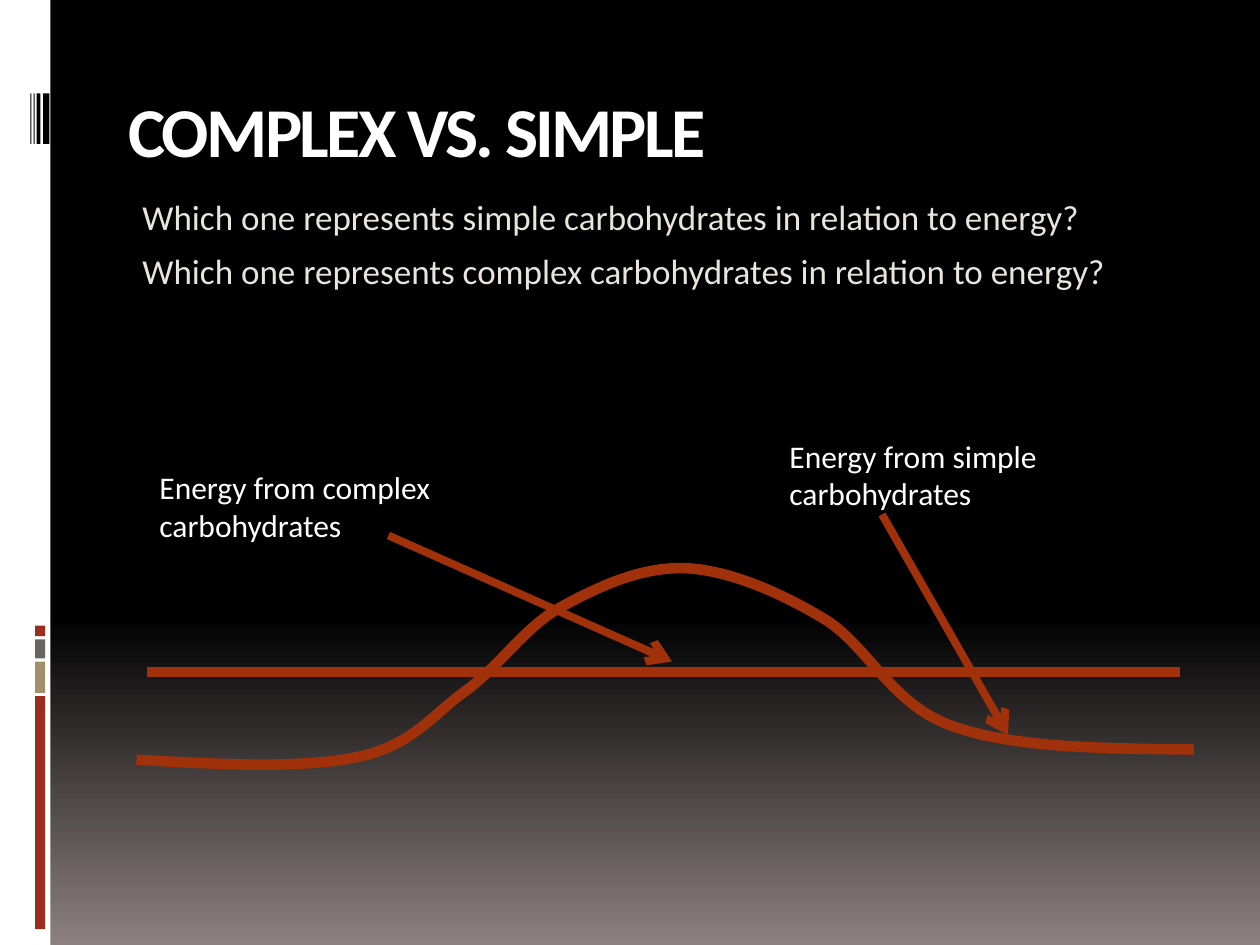
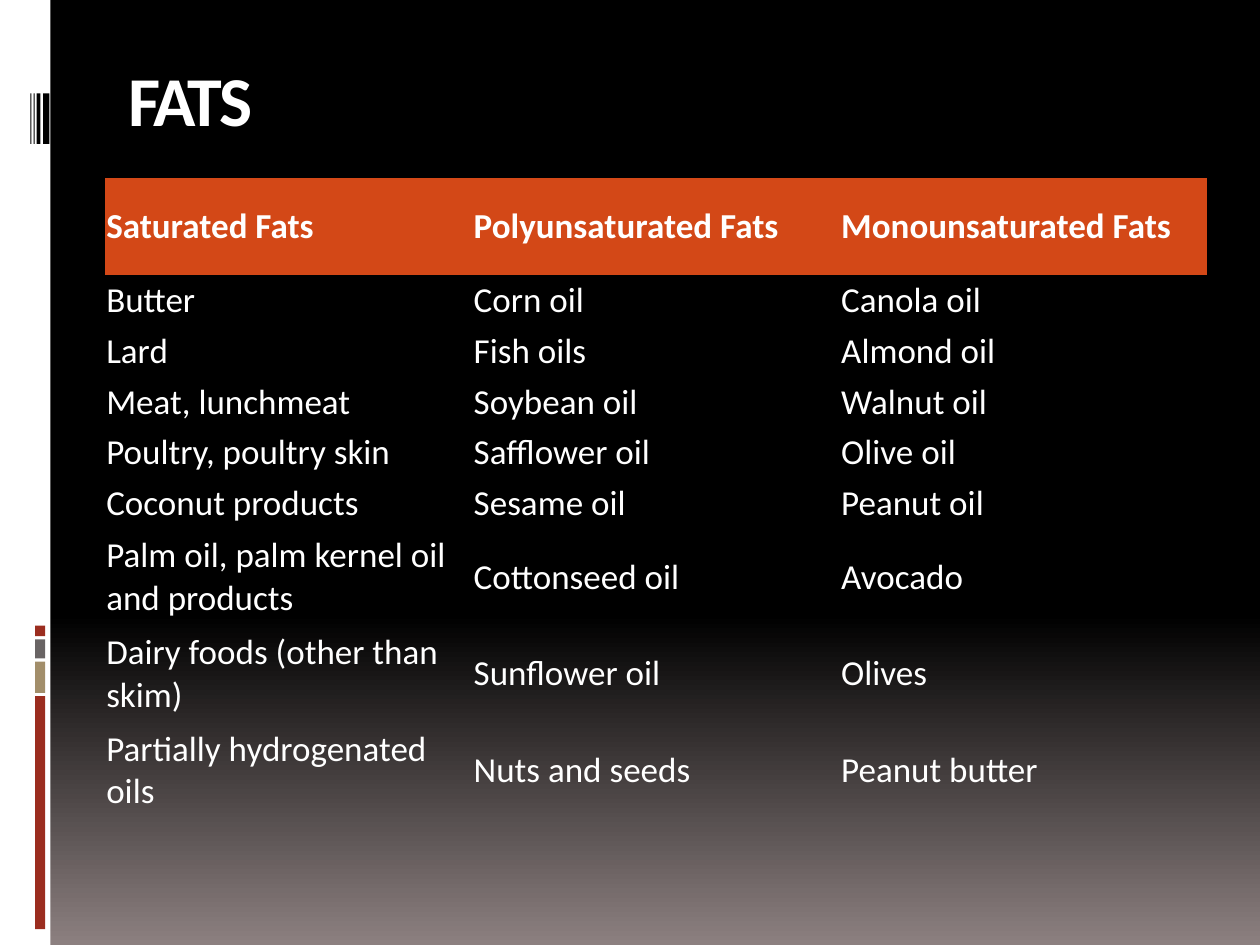
from lxml import etree
from pptx import Presentation, util as u
from pptx.dml.color import RGBColor
from pptx.enum import shapes as sh, text as tx
from pptx.oxml.ns import qn

# Grid: 120 columns by 90 rows on a 10 by 7.5 inch slide
WIDE, HIGH = u.Inches(10), u.Inches(7.5)
COLS, ROWS = 120, 90
FONT = "Calibri"
WHITE, BLACK, CREAM = "FFFFFF", "000000", "E9E5DC"
RUST, ORANGE, HAZE = "A0310A", "D34817", "8C8080"
RED, GREY, TAN = "9B2D1F", "696464", "A28E6A"
NO_STYLE = "{2D5ABB26-0587-4C30-8999-92F81FD0307C}"

FATS = [
    ("Saturated Fats", "Polyunsaturated Fats", "Monounsaturated Fats"),
    ("Butter", "Corn oil", "Canola oil"),
    ("Lard", "Fish oils", "Almond oil"),
    ("Meat, lunchmeat", "Soybean oil", "Walnut oil"),
    ("Poultry, poultry skin", "Safflower oil", "Olive oil"),
    ("Coconut products", "Sesame oil", "Peanut oil"),
    ("Palm oil, palm kernel oil and products", "Cottonseed oil", "Avocado"),
    ("Dairy foods (other than skim)", "Sunflower oil", "Olives"),
    ("Partially hydrogenated oils", "Nuts and seeds", "Peanut butter"),
]
TALL = {0, 6, 7, 8}  # rows with room for two lines

# Bezier points of the energy wave, in percent of its box
WAVE = [
    (0, 95.6),
    (7.9, 98.1), (15.7, 100), (20.8, 94.4),
    (26.1, 88.8), (28, 73.1), (31.2, 61.2),
    (34.4, 48.8), (36.7, 30), (40.1, 20),
    (43.6, 10), (47.6, 0), (51.8, 0.6),
    (55.8, 1.3), (60.6, 11.9), (64.8, 25),
    (69, 37.5), (71.3, 68.1), (77.1, 78.8),
    (83, 90), (91.4, 90), (100, 90.6),
]


def col(n):
    return round(WIDE * n / COLS)


def row(n):
    return round(HIGH * n / ROWS)


def area(box):
    left, top, wide, high = box
    return col(left), row(top), col(wide), row(high)


def hue(code):
    return RGBColor.from_string(code)


def write(par, words, size, color, bold=False):
    run = par.add_run()
    run.text = words
    font = run.font
    font.name, font.size, font.bold = FONT, u.Pt(size), bold
    font.color.rgb = hue(color)
    return run


def place(shape, box):
    shape.left, shape.top, shape.width, shape.height = area(box)
    frame = shape.text_frame
    frame.word_wrap = True
    frame.auto_size = tx.MSO_AUTO_SIZE.NONE
    return frame


# Shared look, kept on the master
def bar(slide, tree, box, color):
    shape = slide.shapes.add_shape(sh.MSO_SHAPE.RECTANGLE, *area(box))
    shape.shadow.inherit = False
    shape.fill.solid()
    shape.fill.fore_color.rgb = hue(color)
    shape.line.fill.background()
    tree.append(shape.element)


def band(slide, master, box):
    left, top, wide, high = box
    tree = master.element.cSld.spTree
    bar(slide, tree, box, WHITE)
    # Stack of colour blocks
    y = top + 59.6
    for tall, color in [(1, RED), (1.8, GREY), (3, TAN), (22.2, RED)]:
        bar(slide, tree, (left + 3.35, y, 0.95, tall), color)
        y += tall + 0.3
    # Thin upright stripes
    for x, thick in [(2.9, 0.1), (3.2, 0.1), (3.5, 0.35), (4.1, 0.6)]:
        bar(slide, tree, (left + x, top + 8.9, thick, 4.8), BLACK)


def backdrop(master):
    fill = master.background.fill
    fill.gradient()
    fill.gradient_angle = 270
    for stop, (pos, color) in zip(fill.gradient_stops, [(0.65, BLACK), (1, HAZE)]):
        stop.position = pos
        stop.color.rgb = hue(color)


def title(slide, words, box):
    frame = place(slide.shapes.title, box)
    frame.vertical_anchor = tx.MSO_ANCHOR.BOTTOM
    par = frame.paragraphs[0]
    par.alignment = tx.PP_ALIGN.LEFT
    run = write(par, words, 40, WHITE, True)
    run.font._element.set("spc", "-150")


# Parts of the energy slide
def asks(slide, lines, box):
    frame = place(slide.placeholders[1], box)
    for i, words in enumerate(lines):
        par = frame.add_paragraph() if i else frame.paragraphs[0]
        par.space_before = u.Pt(7)
        write(par, words, 20, CREAM)
        props = par._p.get_or_add_pPr()
        props.set("marL", str(u.Inches(0.41)))
        props.set("indent", str(u.Inches(-0.38)))
        etree.SubElement(props, qn("a:buNone"))


def stroke(shape, width):
    shape.line.color.rgb = hue(RUST)
    shape.line.width = u.Pt(width)


def link(slide, start, end, width, arrow=False):
    line = slide.shapes.add_connector(
        sh.MSO_CONNECTOR.STRAIGHT, col(start[0]), row(start[1]), col(end[0]), row(end[1]))
    stroke(line, width)
    props = line.element.spPr
    if arrow:
        etree.SubElement(props.find(qn("a:ln")), qn("a:tailEnd"), type="arrow")
    etree.SubElement(props, qn("a:effectLst"))


def wave(slide, box):
    left, top, wide, high = area(box)
    dots = [(left + wide * x / 100, top + high * y / 100) for x, y in WAVE]
    pen = slide.shapes.build_freeform(*dots[0])
    pen.add_line_segments(dots[1:], close=False)
    shape = pen.convert_to_shape()
    shape.shadow.inherit = False
    shape.fill.background()
    stroke(shape, 6)
    # Join each three segments into one curve
    legs = list(shape.element.iter(qn("a:lnTo")))
    for i in range(0, len(legs), 3):
        curve = etree.Element(qn("a:cubicBezTo"))
        legs[i].addprevious(curve)
        for leg in legs[i:i + 3]:
            curve.append(leg[0])
            leg.getparent().remove(leg)


def label(slide, words, box):
    frame = place(slide.shapes.add_textbox(*area(box)), box)
    write(frame.paragraphs[0], words, 18, WHITE)


def graph(slide, box):
    left, top, wide, high = box

    def at(x, y):
        return left + x, top + y

    wave(slide, (*at(0, 13), wide, high - 13))
    link(slide, at(1, 23), at(99.4, 23), 6)
    for kind, spot, start, end in [
        ("simple", (61, 0), (71, 8), (83, 29)),
        ("complex", (1, 3), (24, 10), (51, 22)),
    ]:
        label(slide, f"Energy from {kind} carbohydrates", (*at(*spot), 40, 8.5))
        link(slide, at(*start), at(*end), 4.5, arrow=True)


# Table of fats
def chart(slide, box):
    frame = slide.shapes.add_table(len(FATS), len(FATS[0]), *area(box))
    next(frame.element.iter(qn("a:tableStyleId"))).text = NO_STYLE
    table = frame.table
    table.horz_banding = False
    for part in table.columns:
        part.width = col(box[2] / len(FATS[0]))
    tall = 9.2
    short = (box[3] - tall * len(TALL)) / (len(FATS) - len(TALL))
    for r, line in enumerate(FATS):
        table.rows[r].height = row(tall if r in TALL else short)
        for c, words in enumerate(line):
            cell = table.cell(r, c)
            cell.vertical_anchor = tx.MSO_ANCHOR.MIDDLE
            cell.margin_left = cell.margin_right = u.Inches(0.01)
            cell.margin_top = cell.margin_bottom = u.Inches(0.01)
            if r == 0:
                cell.fill.solid()
                cell.fill.fore_color.rgb = hue(ORANGE)
            else:
                cell.fill.background()
            write(cell.text_frame.paragraphs[0], words, 20, WHITE, r == 0)


def energy(deck):
    slide = deck.slides.add_slide(deck.slide_layouts[1])
    title(slide, "COMPLEX VS. SIMPLE", (11, 6, 102, 10.9))
    asks(slide, [f"Which one represents {kind} carbohydrates in relation to energy?"
                 for kind in ("simple", "complex")], (12, 18, 102, 65.8))
    graph(slide, (13, 41, 100.7, 32.2))
    return slide


def fats(deck):
    slide = deck.slides.add_slide(deck.slide_layouts[5])
    title(slide, "FATS", (11, 4, 102, 10))
    chart(slide, (10, 17, 105, 61))


def main():
    deck = Presentation()
    deck.slide_width, deck.slide_height = WIDE, HIGH
    backdrop(deck.slide_master)
    first = energy(deck)
    band(first, deck.slide_master, (0, 0, 4.8, ROWS))
    fats(deck)
    deck.save("out.pptx")


if __name__ == "__main__":
    main()
